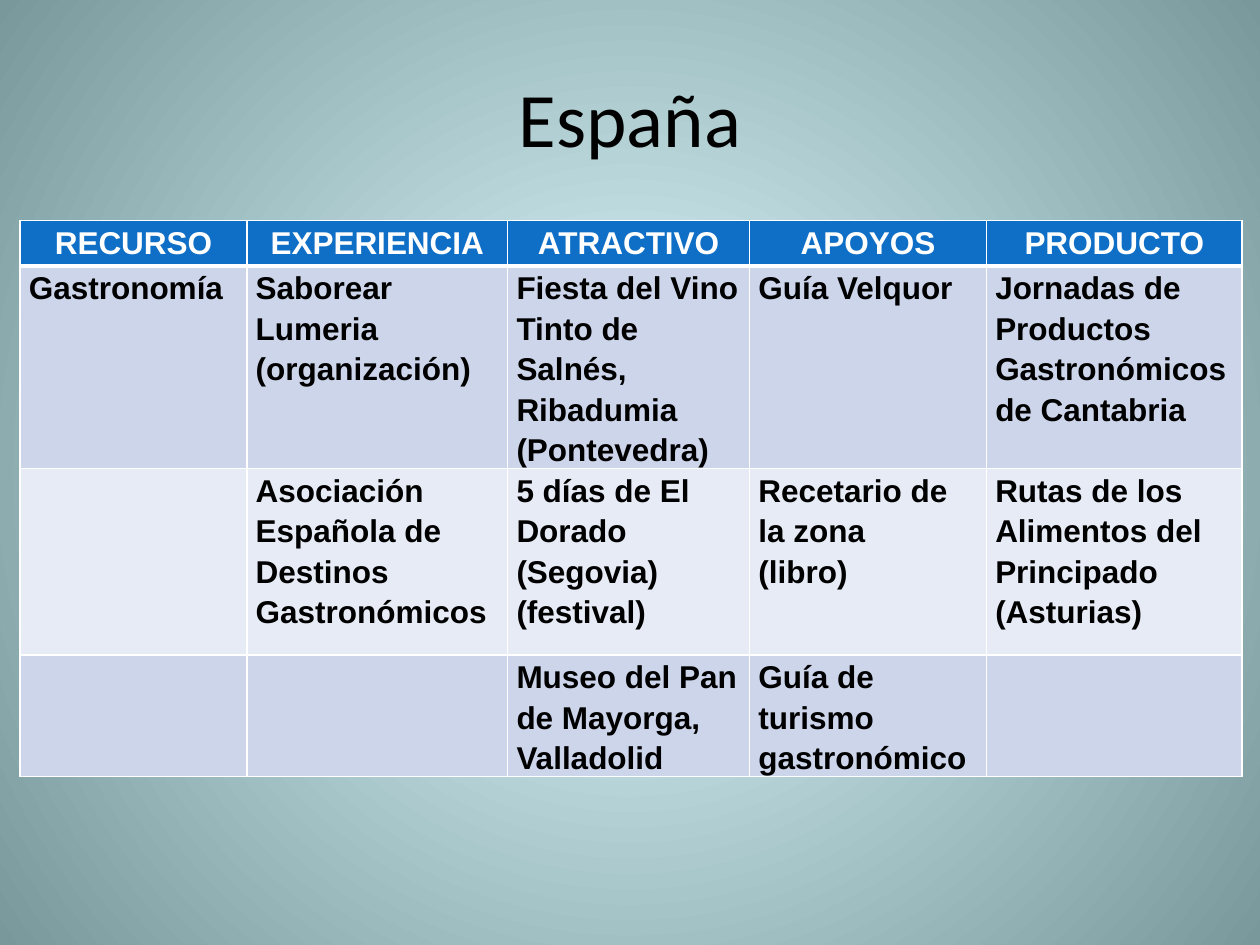
from dataclasses import dataclass

from lxml import etree
from pptx import Presentation
from pptx.dml.color import RGBColor
from pptx.enum.text import MSO_ANCHOR, PP_ALIGN
from pptx.oxml.ns import qn
from pptx.util import Inches, Pt

CENTER, LEFT = PP_ALIGN.CENTER, PP_ALIGN.LEFT
MIDDLE = MSO_ANCHOR.MIDDLE
TITLE_ONLY = 5
SLIDE_SIZE = Inches(10), Inches(7.5)
GRID = 100, 75

HEADINGS = ["RECURSO", "EXPERIENCIA", "ATRACTIVO", "APOYOS", "PRODUCTO"]
RESOURCES = [
    ["Gastronomía", "Saborear Lumeria\n(organización)",
     "Fiesta del Vino Tinto de Salnés, Ribadumia (Pontevedra)", "Guía Velquor",
     "Jornadas de Productos Gastronómicos de Cantabria"],
    ["", "Asociación Española de Destinos Gastronómicos",
     "5 días de El Dorado (Segovia)\n(festival)", "Recetario de la zona\n(libro)",
     "Rutas de los Alimentos del Principado (Asturias)"],
    ["", "", "Museo del Pan de Mayorga, Valladolid",
     "Guía de turismo gastronómico", ""],
]


@dataclass(frozen=True)
class Theme:
    title_font: str = "Calibri"
    table_font: str = "Arial"
    title_size: float = 44
    table_size: float = 18
    line_spacing: float = 1.15
    thin: float = 1
    thick: float = 3
    ink: str = "000000"
    paper: str = "FFFFFF"
    header: str = "0F6FC6"
    bands: tuple = ("CCD5EA", "E7EBF5")
    center: str = "DEFBFF"
    edge: str = "79989C"


def write(frame, text, *, font, size, color, bold=False, align=LEFT, spacing=1.0):
    frame.text = text
    for para in frame.paragraphs:
        para.alignment = align
        para.line_spacing = spacing
        para.font.size = Pt(size)
        for span in para.runs:
            span.font.name = font
            span.font.size = Pt(size)
            span.font.bold = bold
            span.font.color.rgb = RGBColor.from_string(color)


def set_borders(cell, color, **widths):
    properties = cell._tc.get_or_add_tcPr()
    for index, side in enumerate("LRTB"):
        line = etree.Element(qn(f"a:ln{side}"), w=str(Pt(widths[side])))
        fill = etree.SubElement(line, qn("a:solidFill"))
        etree.SubElement(fill, qn("a:srgbClr"), val=color)
        properties.insert(index, line)


class SlideBuilder:
    def __init__(self, deck, theme):
        self.theme = theme
        self.page = deck.slides.add_slide(deck.slide_layouts[TITLE_ONLY])
        self.column = deck.slide_width / GRID[0]
        self.row = deck.slide_height / GRID[1]

    def across(self, columns):
        return round(columns * self.column)

    def down(self, rows):
        return round(rows * self.row)

    def background(self):
        fill = self.page.background.fill
        fill.gradient()
        for stop, color in zip(fill.gradient_stops, (self.theme.center, self.theme.edge)):
            stop.color.rgb = RGBColor.from_string(color)
        gradient = next(self.page.element.iter(qn("a:gradFill")))
        gradient.remove(gradient.find(qn("a:lin")))
        circle = etree.SubElement(gradient, qn("a:path"), {"path": "circle"})
        etree.SubElement(circle, qn("a:fillToRect"), dict.fromkeys("ltrb", "50000"))

    def title(self, text, left, top, width, height):
        box = self.page.shapes.title
        box.left, box.top = self.across(left), self.down(top)
        box.width, box.height = self.across(width), self.down(height)
        box.text_frame.vertical_anchor = MIDDLE
        write(box.text_frame, text, font=self.theme.title_font,
              size=self.theme.title_size, color=self.theme.ink, align=CENTER)

    def table(self, rows, left, top, widths, heights):
        box = self.page.shapes.add_table(
            len(rows), len(widths), self.across(left), self.down(top),
            self.across(sum(widths)), self.down(sum(heights)))
        table = box.table
        table.horz_banding = False
        for column, width in zip(table.columns, widths):
            column.width = self.across(width)
        for row, height in zip(table.rows, heights):
            row.height = self.down(height)
        for row_index, texts in enumerate(rows):
            for column_index, text in enumerate(texts):
                self.cell(table.cell(row_index, column_index), text, row_index)

    def cell(self, cell, text, row_index):
        theme = self.theme
        is_header = row_index == 0
        color = theme.header if is_header else theme.bands[(row_index - 1) % 2]
        cell.fill.solid()
        cell.fill.fore_color.rgb = RGBColor.from_string(color)
        cell.margin_left = cell.margin_right = self.across(0.7)
        cell.margin_top = cell.margin_bottom = 0
        write(cell.text_frame, text, font=theme.table_font, size=theme.table_size,
              color=theme.paper if is_header else theme.ink, bold=True,
              align=CENTER if is_header else LEFT, spacing=theme.line_spacing)
        set_borders(cell, theme.paper, L=theme.thin, R=theme.thin,
                    T=theme.thick if row_index == 1 else theme.thin,
                    B=theme.thick if is_header else theme.thin)


def main():
    deck = Presentation()
    deck.slide_width, deck.slide_height = SLIDE_SIZE
    builder = SlideBuilder(deck, Theme())
    builder.background()
    builder.title("España", 5, 3, 90, 12.5)
    builder.table([HEADINGS, *RESOURCES], 1.6, 17.5,
                  widths=[18, 20.7, 19.2, 18.8, 20.3],
                  heights=[3.6, 9.4, 14.8, 9.4])
    deck.save("out.pptx")


if __name__ == "__main__":
    main()
